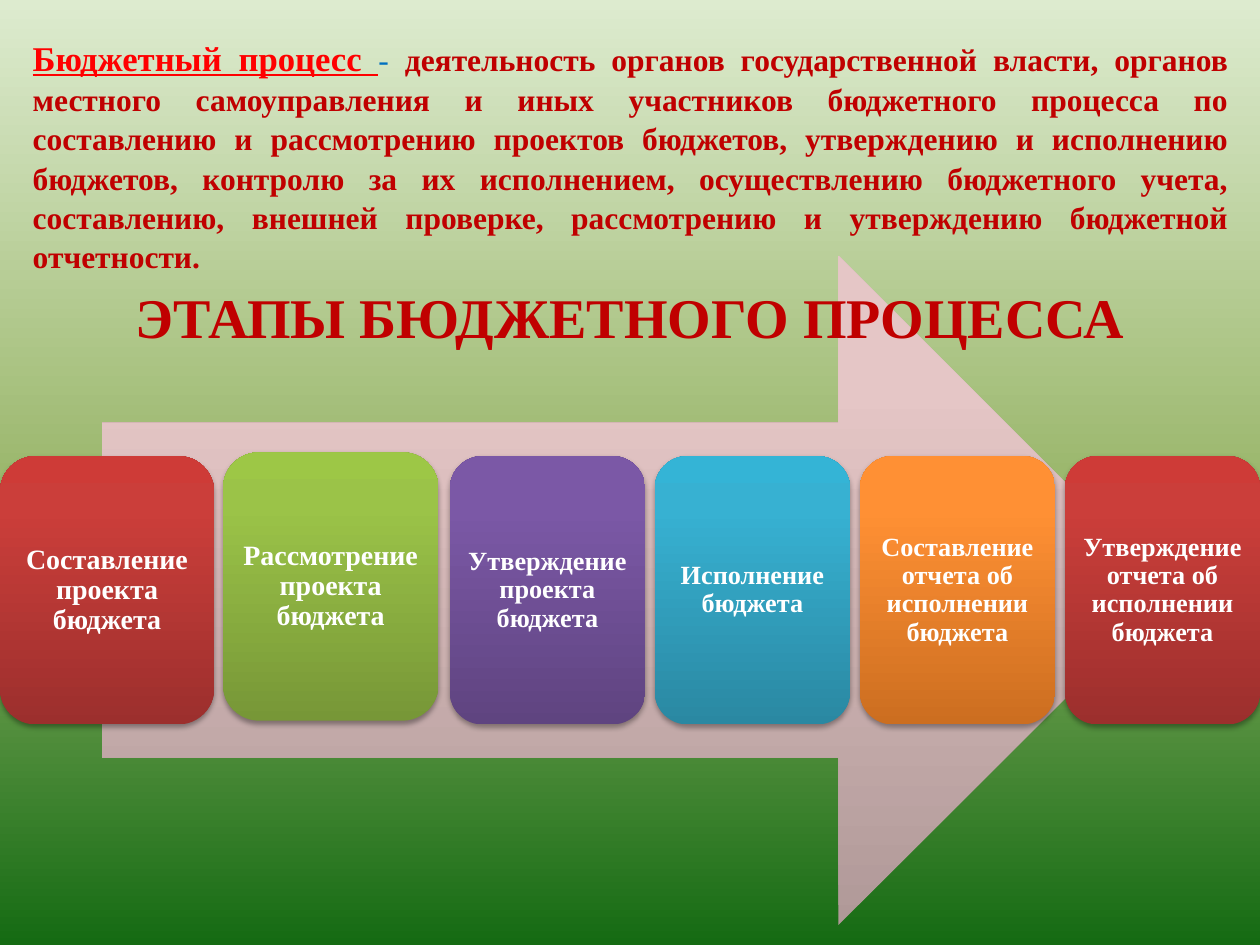
import pptx
import pptx.util
import pptx.dml.color
import pptx.enum.shapes
import pptx.enum.text
import pptx.oxml
import pptx.oxml.ns
from lxml import etree

Inches = pptx.util.Inches
Pt = pptx.util.Pt
ALIGN = pptx.enum.text.PP_ALIGN
ANCHOR = pptx.enum.text.MSO_ANCHOR
SHAPE = pptx.enum.shapes.MSO_SHAPE

# Content
DEFINITION = [
    ("Бюджетный процесс ", dict(size=19.8, color="FF0000", underline=True)),
    ("- ", dict(size=18, color="0070C0", bold=False)),
    ("деятельность органов государственной власти, органов местного "
     "самоуправления и иных участников бюджетного процесса по составлению и "
     "рассмотрению проектов бюджетов, утверждению и исполнению бюджетов, "
     "контролю за их исполнением, осуществлению бюджетного учета, составлению, "
     "внешней проверке, рассмотрению и утверждению бюджетной отчетности.",
     dict(size=18, color="C00000")),
]
HEADING = "ЭТАПЫ БЮДЖЕТНОГО ПРОЦЕССА"

# Gradients: (position in percent, colour)
BACKGROUND = [(0, "DDEBCF"), (50, "9CB86E"), (100, "156B13")]
PINK = [(0, "B09998"), (80, "E5C6C6"), (100, "E6C7C6")]
RED = [(0, "9C2F2D"), (80, "CB3E3A"), (100, "CE3B37")]
GREEN = [(0, "779737"), (80, "9BC348"), (100, "9DC746")]
PURPLE = [(0, "5F4480"), (80, "7B58A6"), (100, "7C57A8")]
BLUE = [(0, "2A88A2"), (80, "37B1D2"), (100, "34B4D6")]
ORANGE = [(0, "CC6E20"), (80, "FF9034"), (100, "FF9136")]

# Stages: text, gradient, left, top, width, text size
WIDE, NARROW, STEP, FIRST_NARROW = 1.7, 1.55, 1.627, 3.57
STAGES = [
    ("Составление проекта бюджета", RED, 0, 3.62, WIDE, 16),
    ("Рассмотрение проекта бюджета", GREEN, 1.77, 3.59, WIDE + 0.01, 16),
] + [
    (text, colors, FIRST_NARROW + i * STEP, 3.62, NARROW, 15)
    for i, (text, colors) in enumerate([
        ("Утверждение проекта бюджета", PURPLE),
        ("Исполнение бюджета", BLUE),
        ("Составление отчета об исполнении бюджета", ORANGE),
        ("Утверждение отчета об исполнении бюджета", RED),
    ])
]


def rgb(color):
    return pptx.dml.color.RGBColor.from_string(color)


def add_text(para, text, size=18, color="FFFFFF", bold=True, underline=False):
    span = para.add_run()
    span.text = text
    font = span.font
    font.name, font.size = "Times New Roman", Pt(size)
    font.bold, font.underline = bold, underline
    font.color.rgb = rgb(color)


def paint(fill, element, stops, angle):
    """Gradient with any number of stops; angle runs counter-clockwise."""
    fill.gradient()
    fill.gradient_angle = angle
    stop_list = element.find(".//" + pptx.oxml.ns.qn("a:gsLst"))
    for old in list(stop_list):
        stop_list.remove(old)
    for position, color in stops:
        stop = etree.SubElement(stop_list, pptx.oxml.ns.qn("a:gs"),
                                pos=str(position * 1000))
        etree.SubElement(stop, pptx.oxml.ns.qn("a:srgbClr"), val=color)


def add_block(kind, left, top, width, height, stops):
    block = slide.shapes.add_shape(kind, Inches(left), Inches(top),
                                   Inches(width), Inches(height))
    block.shadow.inherit = False
    block.line.fill.background()
    paint(block.fill, block._element.spPr, stops, 90)
    return block


def add_shadow(shape):
    effects = shape._element.spPr.find(pptx.oxml.ns.qn("a:effectLst"))
    effects.append(pptx.oxml.parse_xml(
        f'<a:outerShdw {pptx.oxml.ns.nsdecls("a")} blurRad="{Pt(3.1)}" '
        f'dist="{Pt(1.8)}" dir="5400000" rotWithShape="0">'
        '<a:srgbClr val="000000"><a:alpha val="35000"/></a:srgbClr>'
        '</a:outerShdw>'))


deck = pptx.Presentation()
deck.slide_width, deck.slide_height = Inches(10), Inches(7.5)
slide = deck.slides.add_slide(deck.slide_layouts[5])
paint(slide.background.fill, slide._element.cSld, BACKGROUND, 270)

# Definition in the title
title = slide.shapes.title
title.left, title.top = Inches(0.16), Inches(0.16)
title.width, title.height = Inches(9.69), Inches(2.34)
frame = title.text_frame
frame.auto_size = pptx.enum.text.MSO_AUTO_SIZE.NONE
frame.word_wrap = True
frame.vertical_anchor = ANCHOR.TOP
frame.margin_top = Inches(0.12)
para = frame.paragraphs[0]
para.alignment, para.line_spacing = ALIGN.JUSTIFY, 1.04
for text, style in DEFINITION:
    add_text(para, text, **style)

# Arrow behind the stages
add_block(SHAPE.RIGHT_ARROW, 0.81, 2.03, 8.5, 5.31, PINK)

# Stages
for text, stops, left, top, width, size in STAGES:
    card = add_block(SHAPE.ROUNDED_RECTANGLE, left, top, width, 2.13, stops)
    add_shadow(card)
    frame = card.text_frame
    frame.word_wrap = True
    frame.vertical_anchor = ANCHOR.MIDDLE
    inset = Inches(0.07 if size == 16 else 0.06)
    frame.margin_left = frame.margin_right = inset
    frame.margin_top = frame.margin_bottom = inset
    para = frame.paragraphs[0]
    para.alignment, para.line_spacing = ALIGN.CENTER, 0.9
    add_text(para, text, size=size)

# Heading over the arrow
box = slide.shapes.add_textbox(Inches(0.39), Inches(2.19),
                               Inches(9.22), Inches(0.64))
box.text_frame.word_wrap = True
para = box.text_frame.paragraphs[0]
para.alignment = ALIGN.CENTER
add_text(para, HEADING, size=32, color="C00000")

deck.save("out.pptx")
